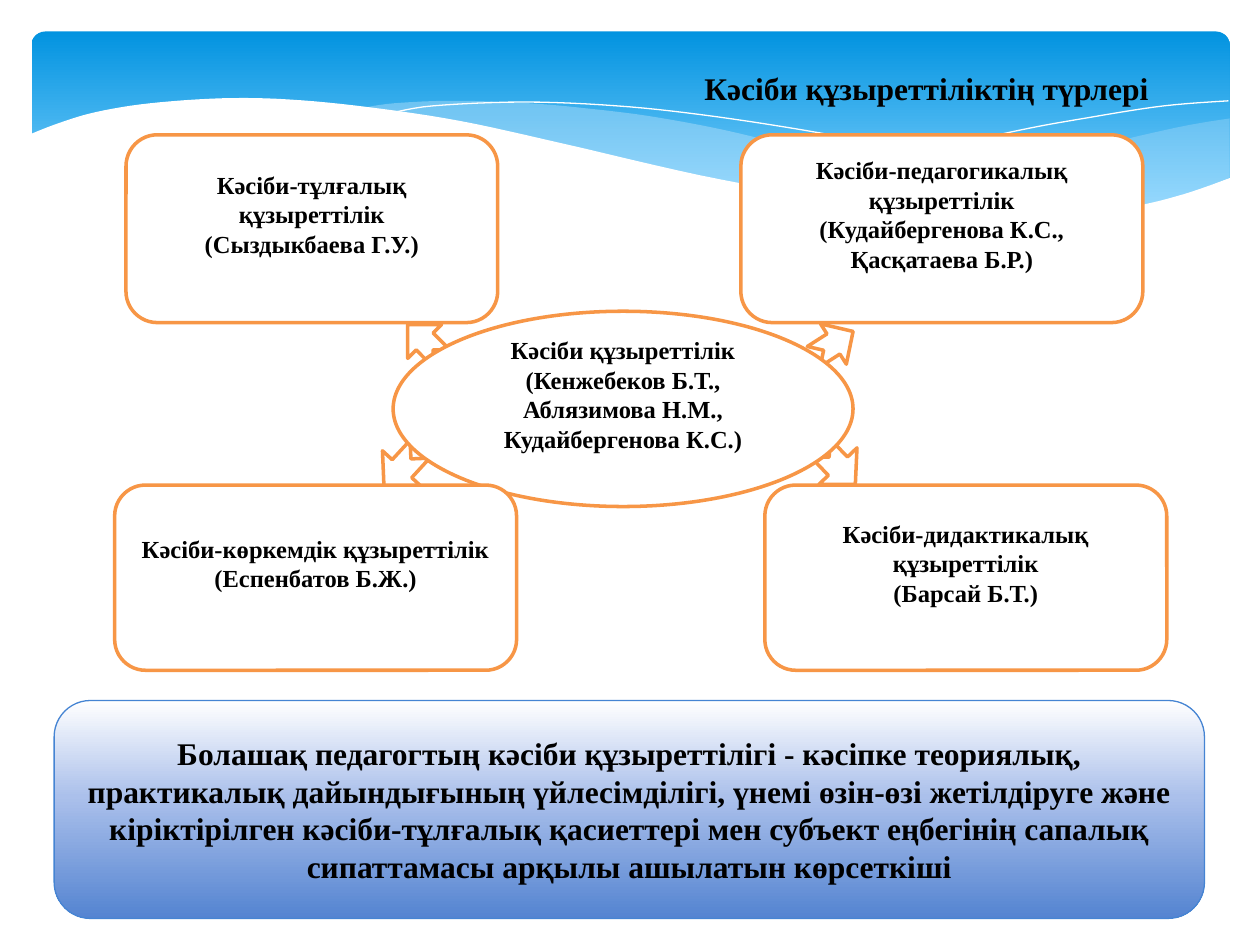
from copy import deepcopy

from lxml.etree import SubElement
from pptx import Presentation
from pptx.dml.color import RGBColor
from pptx.enum.shapes import MSO_SHAPE
from pptx.enum.text import MSO_ANCHOR, PP_ALIGN
from pptx.oxml.ns import qn
from pptx.util import Inches, Pt

WHITE = RGBColor(0xFF, 0xFF, 0xFF)
BLACK = RGBColor(0, 0, 0)
ORANGE = RGBColor(0xF7, 0x96, 0x46)
BLUE = RGBColor(0x45, 0x84, 0xD3)
PALE_BLUE = RGBColor(0xC6, 0xE7, 0xFC)
HEADER_STOPS = [(0, RGBColor(0x02, 0x93, 0xE0)), (0.9, RGBColor(0x83, 0xD3, 0xFE))]
SUMMARY_STOPS = [(0, WHITE), (0.44, RGBColor(0xAB, 0xC0, 0xEB)), (1, RGBColor(0x54, 0x84, 0xD1))]
FONT = "Times New Roman"
BLANK_LINE = 0.23

TITLE = "Кәсіби құзыреттіліктің түрлері"
SUMMARY = (
    "Болашақ педагогтың кәсіби құзыреттілігі - кәсіпке теориялық, практикалық "
    "дайындығының үйлесімділігі, үнемі өзін-өзі жетілдіруге және кіріктірілген "
    "кәсіби-тұлғалық қасиеттері мен субъект еңбегінің сапалық сипаттамасы арқылы "
    "ашылатын көрсеткіші"
)
CENTRE = ["Кәсіби құзыреттілік (Кенжебеков Б.Т., Аблязимова Н.М., Кудайбергенова К.С.)"]
COMPETENCES = [
    ((1, 1.07, 2.95, 1.49), ["Кәсіби-тұлғалық құзыреттілік", "(Сыздыкбаева Г.У.)"]),
    ((6.07, 3.85, 3.19, 1.47), ["Кәсіби-дидактикалық құзыреттілік", "(Барсай Б.Т.)"]),
    ((0.91, 3.85, 3.19, 1.47), ["Кәсіби-көркемдік құзыреттілік", "(Еспенбатов Б.Ж.)"]),
    ((5.88, 1.07, 3.19, 1.49),
     ["Кәсіби-педагогикалық құзыреттілік", "(Кудайбергенова К.С., Қасқатаева Б.Р.)"]),
]
ARROWS = [
    ((2.98, 3.51, 0.42, 0.42), 132.6),
    ((3.18, 2.52, 0.38, 0.38), 225),
    ((6.43, 2.54, 0.37, 0.38), 327.4),
    ((6.45, 3.49, 0.4, 0.42), 46.2),
]

RIGHT_WAVE = [
    [(9.76, 0.94), (9.35, 1.01), (8.61, 1.18), (7.79, 1.37), (7.06, 1.52), (6.61, 1.6)],
    [(6.61, 1.6), (7.19, 1.67), (7.69, 1.71), (8.14, 1.72), (8.63, 1.7), (9.05, 1.63),
     (9.42, 1.54), (9.76, 1.41)],
]
MIDDLE_WAVE = [
    [(8.93, 1.67), (8.37, 1.59), (7.41, 1.42), (6.29, 1.16), (5.69, 1.02), (5.14, 0.92),
     (4.65, 0.86), (4.2, 0.82), (3.61, 0.8), (3.13, 0.82), (2.86, 0.86)],
    [(2.86, 0.86), (3.42, 0.94), (4.04, 1.06), (4.91, 1.26), (5.66, 1.43), (6.34, 1.56),
     (6.95, 1.65), (7.48, 1.7), (8.07, 1.73), (8.57, 1.71), (8.93, 1.67)],
]
LONG_LINE = [
    [(3.09, 0.9), (3.44, 0.84), (4.16, 0.81), (4.89, 0.84), (5.56, 0.91), (6.36, 1.03),
     (7.27, 1.2), (8.31, 1.45), (9.07, 1.66)],
]
SHORT_LINE = [
    [(6.13, 1.51), (6.53, 1.41), (7.2, 1.24), (8.06, 1.04), (8.66, 0.93), (9.24, 0.84), (9.75, 0.8)],
]
WHITE_WAVE = [
    [(9.77, 1.41), (9.4, 1.54), (8.99, 1.64), (8.5, 1.7), (7.93, 1.71), (7.26, 1.67),
     (6.48, 1.56), (5.55, 1.39), (4.47, 1.14), (3.65, 0.96), (2.92, 0.85), (2.3, 0.79),
     (1.77, 0.78), (1.19, 0.82), (0.76, 0.89), (0.46, 0.98), (0.23, 1.07)],
    [(0.23, 2.24), (9.77, 2.24)],
]


def smooth_curve(points, steps=6):
    padded = [points[0], *points, points[-1]]
    result = [points[0]]
    for a, b, c, d in zip(padded, padded[1:], padded[2:], padded[3:]):
        for step in range(1, steps + 1):
            t = step / steps
            result.append(tuple(
                0.5 * (2 * q + (r - p) * t + (2 * p - 5 * q + 4 * r - s) * t**2
                       + (3 * q - p - 3 * r + s) * t**3)
                for p, q, r, s in zip(a, b, c, d)
            ))
    return result


def add_wave(shapes, curves, fill=None, opacity=None):
    points = [(Inches(x), Inches(y)) for curve in curves for x, y in smooth_curve(curve)]
    builder = shapes.build_freeform(*points[0])
    builder.add_line_segments(points[1:], close=fill is not None)
    wave = builder.convert_to_shape()
    wave.shadow.inherit = False
    if fill is None:
        wave.fill.background()
        wave.line.color.rgb = WHITE
        wave.line.width = Pt(0)
        return
    wave.fill.solid()
    wave.fill.fore_color.rgb = fill
    wave.line.fill.background()
    if opacity:
        color = wave.element.spPr.find(qn("a:solidFill")).find(qn("a:srgbClr"))
        SubElement(color, qn("a:alpha"), val=str(opacity * 1000))


def add_box(shapes, kind, box, line=ORANGE, width=2):
    shape = shapes.add_shape(kind, *map(Inches, box))
    shape.shadow.inherit = False
    shape.fill.solid()
    shape.fill.fore_color.rgb = WHITE
    if line is None:
        shape.line.fill.background()
    else:
        shape.line.color.rgb = line
        shape.line.width = Pt(width)
    return shape


def set_gradient(shape, stops):
    shape.fill.gradient()
    shape.fill.gradient_angle = 270
    stop_list = shape.element.spPr.find(qn("a:gradFill")).find(qn("a:gsLst"))
    for _ in stops[2:]:
        stop_list.append(deepcopy(stop_list[-1]))
    for stop, (position, color) in zip(shape.fill.gradient_stops, stops):
        stop.position = position
        stop.color.rgb = color


def write(shape, lines, size, alignment=PP_ALIGN.CENTER):
    frame = shape.text_frame
    frame.text = "\n".join(lines)
    frame.word_wrap = True
    frame.vertical_anchor = MSO_ANCHOR.MIDDLE
    for paragraph in frame.paragraphs:
        paragraph.alignment = alignment
        for run in paragraph.runs:
            run.font.name = FONT
            run.font.size = Pt(size)
            run.font.bold = True
            run.font.color.rgb = BLACK


def write_competence(shape, lines):
    write(shape, lines, 14)
    shape.text_frame.margin_bottom = Inches(0.05 + BLANK_LINE)


def main():
    presentation = Presentation()
    presentation.slide_width = Inches(10)
    presentation.slide_height = Inches(7.5)
    slide = presentation.slides.add_slide(presentation.slide_layouts[5])
    shapes = slide.shapes

    header = add_box(shapes, MSO_SHAPE.ROUNDED_RECTANGLE, (0.25, 0.25, 9.51, 1.56), None)
    header.adjustments[0] = 0.07
    set_gradient(header, HEADER_STOPS)
    add_wave(shapes, RIGHT_WAVE, PALE_BLUE, 29)
    add_wave(shapes, MIDDLE_WAVE, PALE_BLUE, 40)
    add_wave(shapes, LONG_LINE)
    add_wave(shapes, SHORT_LINE)
    add_wave(shapes, WHITE_WAVE, WHITE)

    title = shapes.title
    title.left, title.top, title.width, title.height = map(Inches, (5.49, 0.5, 3.76, 0.4))
    write(title, [TITLE], 18, PP_ALIGN.LEFT)
    title.text_frame.word_wrap = False
    title.element.getparent().append(title.element)

    for box, angle in ARROWS:
        add_box(shapes, MSO_SHAPE.NOTCHED_RIGHT_ARROW, box).rotation = angle
    write_competence(add_box(shapes, MSO_SHAPE.OVAL, (3.12, 2.47, 3.65, 1.55)), CENTRE)
    for box, lines in COMPETENCES:
        write_competence(add_box(shapes, MSO_SHAPE.ROUNDED_RECTANGLE, box), lines)

    summary = add_box(shapes, MSO_SHAPE.ROUNDED_RECTANGLE, (0.43, 5.56, 9.13, 1.73), BLUE, 0.75)
    set_gradient(summary, SUMMARY_STOPS)
    write(summary, [SUMMARY], 18)

    presentation.save("out.pptx")


if __name__ == "__main__":
    main()
